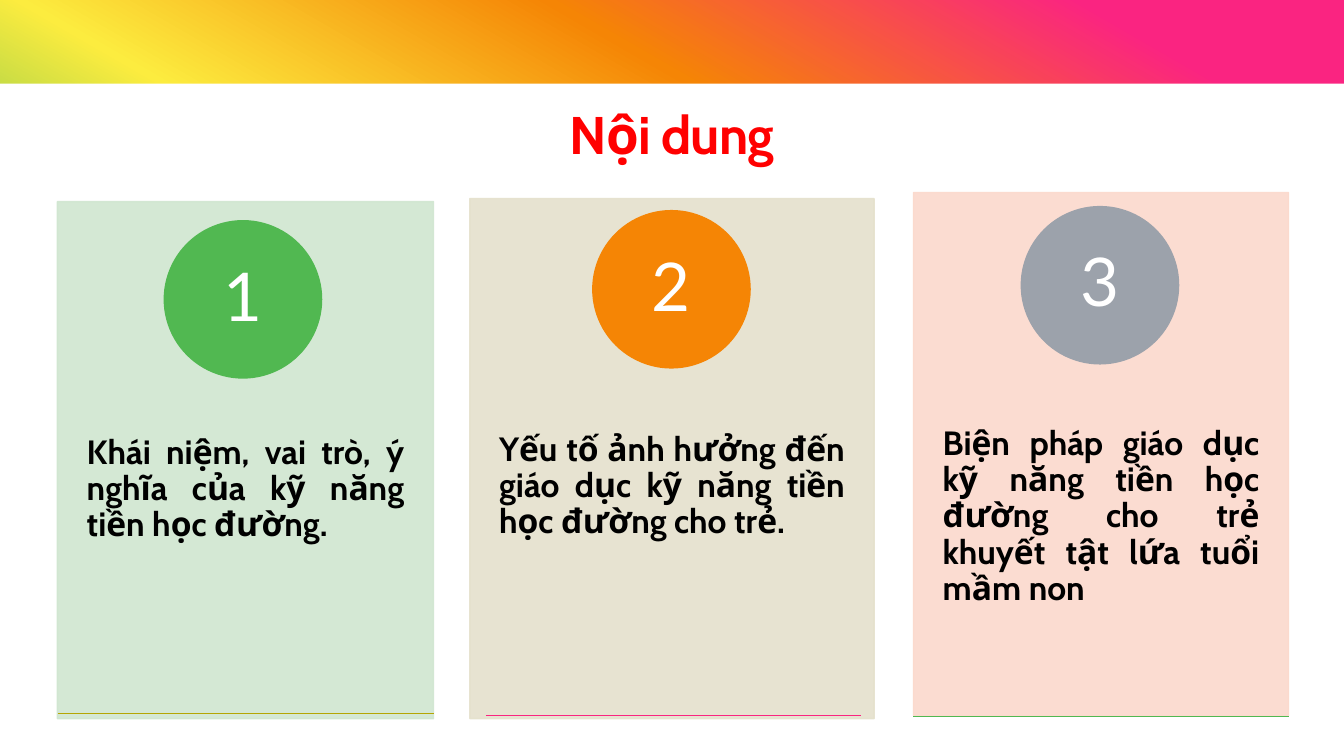
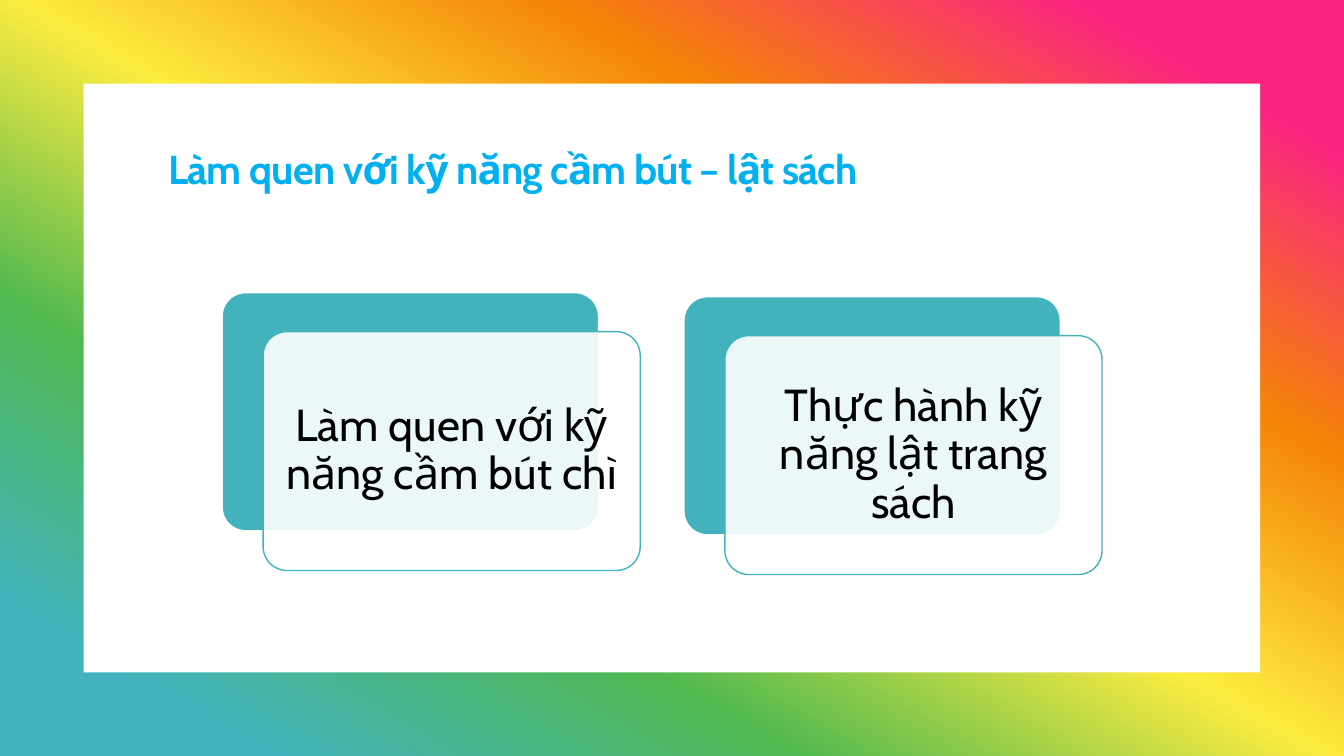
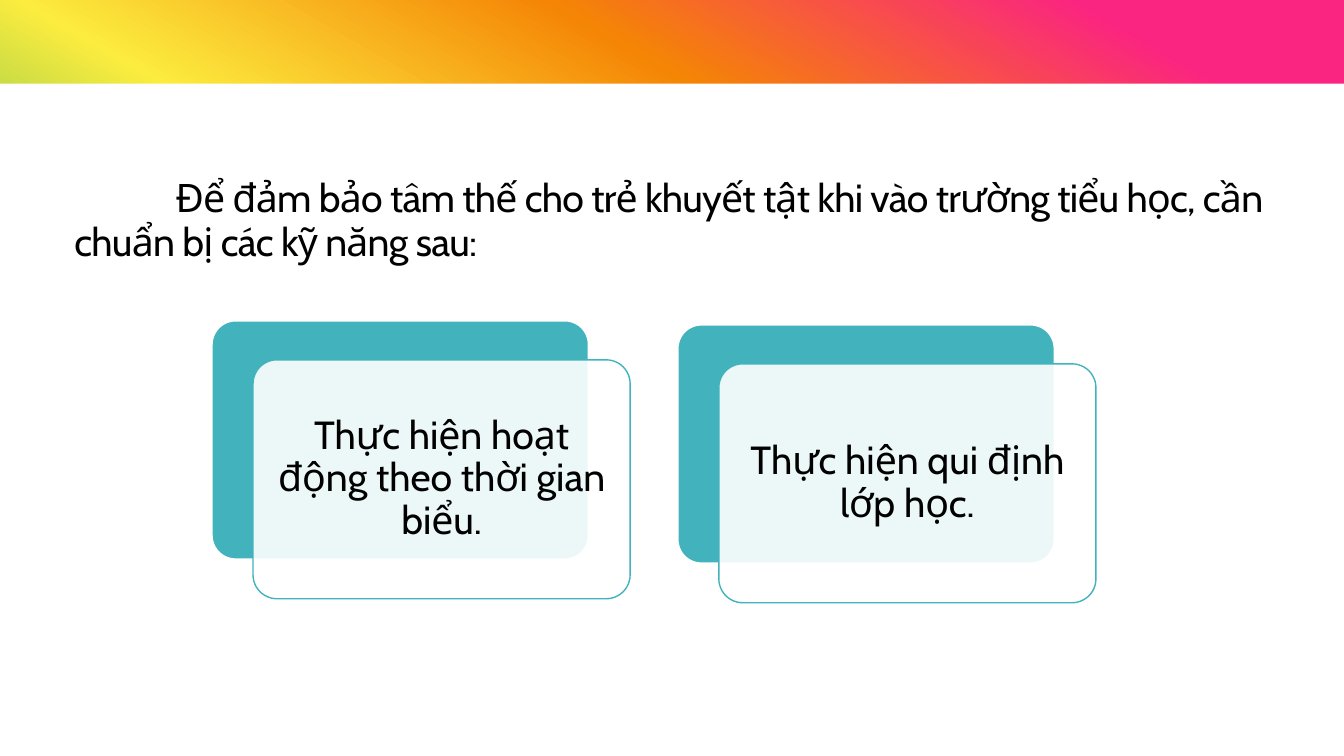
from dataclasses import dataclass

from lxml import etree
from pptx import Presentation
from pptx.dml.color import RGBColor
from pptx.enum.shapes import MSO_CONNECTOR, MSO_SHAPE
from pptx.enum.text import MSO_ANCHOR, PP_ALIGN
from pptx.oxml.ns import qn
from pptx.util import Inches, Pt

RECT = MSO_SHAPE.RECTANGLE
ROUND = MSO_SHAPE.ROUNDED_RECTANGLE
OVAL = MSO_SHAPE.OVAL
STRAIGHT = MSO_CONNECTOR.STRAIGHT
TOP, MIDDLE = MSO_ANCHOR.TOP, MSO_ANCHOR.MIDDLE
LEFT, CENTER, JUSTIFY = PP_ALIGN.LEFT, PP_ALIGN.CENTER, PP_ALIGN.JUSTIFY

SLIDE_W, SLIDE_H = 13.33, 7.5
BAND = 0.83


@dataclass(frozen=True)
class Theme:
    font: str = "Cabin"
    number_font: str = "Lato"
    white: str = "FFFFFF"
    black: str = "000000"
    red: str = "FF0000"
    sky: str = "00B0F0"
    teal: str = "42B3BD"
    green: str = "51B851"
    orange: str = "F58505"
    pink: str = "FA2481"
    yellow: str = "FCEC3F"
    olive: str = "B5A603"
    gray: str = "9CA2AB"
    pale_green: str = "D0E6D0"
    pale_sand: str = "E5E1CC"
    pale_pink: str = "FBD9CC"
    title_size: float = 37.8
    heading_size: float = 28.8
    lead_size: float = 28
    body_size: float = 24
    number_size: float = 48
    large_card_size: float = 32
    card_size: float = 28
    gradient_angle: int = 120

    @property
    def rainbow(self):
        return ((10, self.pink), (30, self.orange), (50, self.yellow),
                (70, self.green), (90, self.teal))


class Deck:
    def __init__(self, theme):
        self.theme = theme
        self.prs = Presentation()
        self.prs.slide_width = Inches(SLIDE_W)
        self.prs.slide_height = Inches(SLIDE_H)
        self.shapes = None

    def slide(self, side=0, bottom=0):
        s = self.prs.slides.add_slide(self.prs.slide_layouts[6])
        self.shapes = s.shapes
        backdrop = self.shape(RECT, 0, 0, SLIDE_W, SLIDE_H, self.theme.white)
        self.gradient(backdrop)
        self.shape(RECT, side, BAND, SLIDE_W - 2 * side,
                   SLIDE_H - BAND - bottom, self.theme.white)

    def gradient(self, sp):
        spPr = sp._element.spPr
        grad = etree.Element(qn("a:gradFill"), rotWithShape="1")
        stops = etree.SubElement(grad, qn("a:gsLst"))
        for pos, color in self.theme.rainbow:
            gs = etree.SubElement(stops, qn("a:gs"), pos=str(pos * 1000))
            etree.SubElement(gs, qn("a:srgbClr"), val=color)
        etree.SubElement(grad, qn("a:lin"), scaled="0",
                         ang=str(self.theme.gradient_angle * 60000))
        spPr.replace(spPr.find(qn("a:solidFill")), grad)

    def shape(self, kind, x, y, w, h, fill, line=None, weight=1, alpha=None):
        sp = self.shapes.add_shape(kind, Inches(x), Inches(y), Inches(w), Inches(h))
        sp.shadow.inherit = False
        sp.fill.solid()
        sp.fill.fore_color.rgb = RGBColor.from_string(fill)
        if line:
            sp.line.color.rgb = RGBColor.from_string(line)
            sp.line.width = Pt(weight)
        else:
            sp.line.fill.background()
        if alpha:
            for clr in sp._element.spPr.iter(qn("a:srgbClr")):
                if clr.get("val") == fill:
                    etree.SubElement(clr, qn("a:alpha"), val=str(alpha * 1000))
        return sp

    def set_text(self, sp, text, size, color, align, anchor=TOP, font=None,
                 bold=False, insets=(0.1, 0.05), spacing=0.9):
        tf = sp.text_frame
        tf.word_wrap = True
        tf.vertical_anchor = anchor
        tf.margin_left = tf.margin_right = Inches(insets[0])
        tf.margin_top = tf.margin_bottom = Inches(insets[1])
        p = tf.paragraphs[0]
        p.text = text
        p.alignment = align
        p.line_spacing = spacing
        p.font.name = font or self.theme.font
        p.font.size = Pt(size)
        p.font.bold = bold
        p.font.color.rgb = RGBColor.from_string(color)
        return p

    def textbox(self, x, y, w, h, text, size, color, align, **style):
        sp = self.shapes.add_textbox(Inches(x), Inches(y), Inches(w), Inches(h))
        return self.set_text(sp, text, size, color, align, **style)

    def title(self, x, y, w, h, text, size, color, align=LEFT, bold=True, indent=0):
        p = self.textbox(x, y, w, h, text, size, color, align, bold=bold, spacing=0.95)
        pPr = p._p.get_or_add_pPr()
        pPr.set("indent", str(Inches(indent)))
        for r in p.runs:
            r._r.get_or_add_rPr().set("spc", "-50")

    def rule(self, x, y, w, color):
        ln = self.shapes.add_connector(STRAIGHT, Inches(x), Inches(y),
                                       Inches(x + w), Inches(y))
        ln.line.color.rgb = RGBColor.from_string(color)
        ln.line.width = Pt(1)
        etree.SubElement(ln._element.spPr, qn("a:effectLst"))

    def topic(self, x, y, w, h, fill, text):
        self.shape(RECT, x, y, w, h, fill, fill, alpha=90)
        self.textbox(x, y + 1.96, w, h - 2.06, text, self.theme.body_size,
                     self.theme.black, JUSTIFY, bold=True, insets=(0.29, 0.36))

    def badge(self, x, y, number, color):
        sp = self.shape(OVAL, x, y, 1.56, 1.56, color, color)
        self.set_text(sp, str(number), self.theme.number_size, self.theme.white, CENTER,
                      MIDDLE, self.theme.number_font, insets=(0.12, 0.01))

    def layered_card(self, x, y, text, size):
        t = self.theme
        w, h = 3.74, 2.37
        back = self.shape(ROUND, x, y, w, h, t.teal, t.white, 1.5)
        front = self.shape(ROUND, x + 0.41, y + 0.39, w, h, t.white, t.teal, alpha=90)
        for sp in (back, front):
            sp.adjustments[0] = 0.1
        self.set_text(front, text, size, t.black, CENTER, MIDDLE, insets=(0.13, 0.13))


def contents(deck):
    t = deck.theme
    deck.slide()
    deck.title(0.83, 1, 11.67, 0.76, "Nội dung", t.title_size, t.red, CENTER)
    topics = [
        ((0.57, 2, 3.73, 5.13), t.pale_green, 2.19, t.green, 7.08, t.olive,
         "Khái niệm, vai trò, ý nghĩa của kỹ năng tiền học đường."),
        ((4.66, 1.97, 4.01, 5.16), t.pale_sand, 2.09, t.orange, 7.1, t.pink,
         "Yếu tố ảnh hưởng đến giáo dục kỹ năng tiền học đường cho trẻ."),
        ((9.06, 1.91, 3.72, 5.19), t.pale_pink, 2.05, t.gray, 7.11, t.green,
         "Biện pháp giáo dục kỹ năng tiền học đường cho trẻ khuyết tật lứa tuổi mầm non"),
    ]
    for i, (box, fill, badge_y, badge_color, rule_y, rule_color, text) in enumerate(topics):
        deck.topic(*box, fill, text)
        deck.badge(1.63 + 4.25 * i, badge_y, i + 1, badge_color)
        deck.rule(0.58 + 4.24 * i, rule_y, 3.72, rule_color)


def pencil_and_book(deck):
    t = deck.theme
    deck.slide(side=BAND, bottom=BAND)
    deck.title(1.57, 1.42, 10, 0.76, "Làm quen với kỹ năng cầm bút – lật sách",
               t.heading_size, t.sky)
    deck.layered_card(2.2, 2.9, "Làm quen với kỹ năng cầm bút chì", t.large_card_size)
    deck.layered_card(6.78, 2.94, "Thực hành kỹ năng lật trang sách", t.large_card_size)


def school_readiness(deck):
    t = deck.theme
    deck.slide()
    deck.title(0.64, 1.7, 12.13, 1.3,
               "Để đảm bảo tâm thế cho trẻ khuyết tật khi vào trường tiểu học, "
               "cần chuẩn bị các kỹ năng sau:",
               t.lead_size, t.black, bold=False, indent=1)
    deck.layered_card(2.1, 3.18, "Thực hiện hoạt động theo thời gian biểu.", t.card_size)
    deck.layered_card(6.72, 3.22, "Thực hiện qui định lớp học.", t.card_size)


def main():
    deck = Deck(Theme())
    contents(deck)
    pencil_and_book(deck)
    school_readiness(deck)
    deck.prs.save("out.pptx")


if __name__ == "__main__":
    main()
